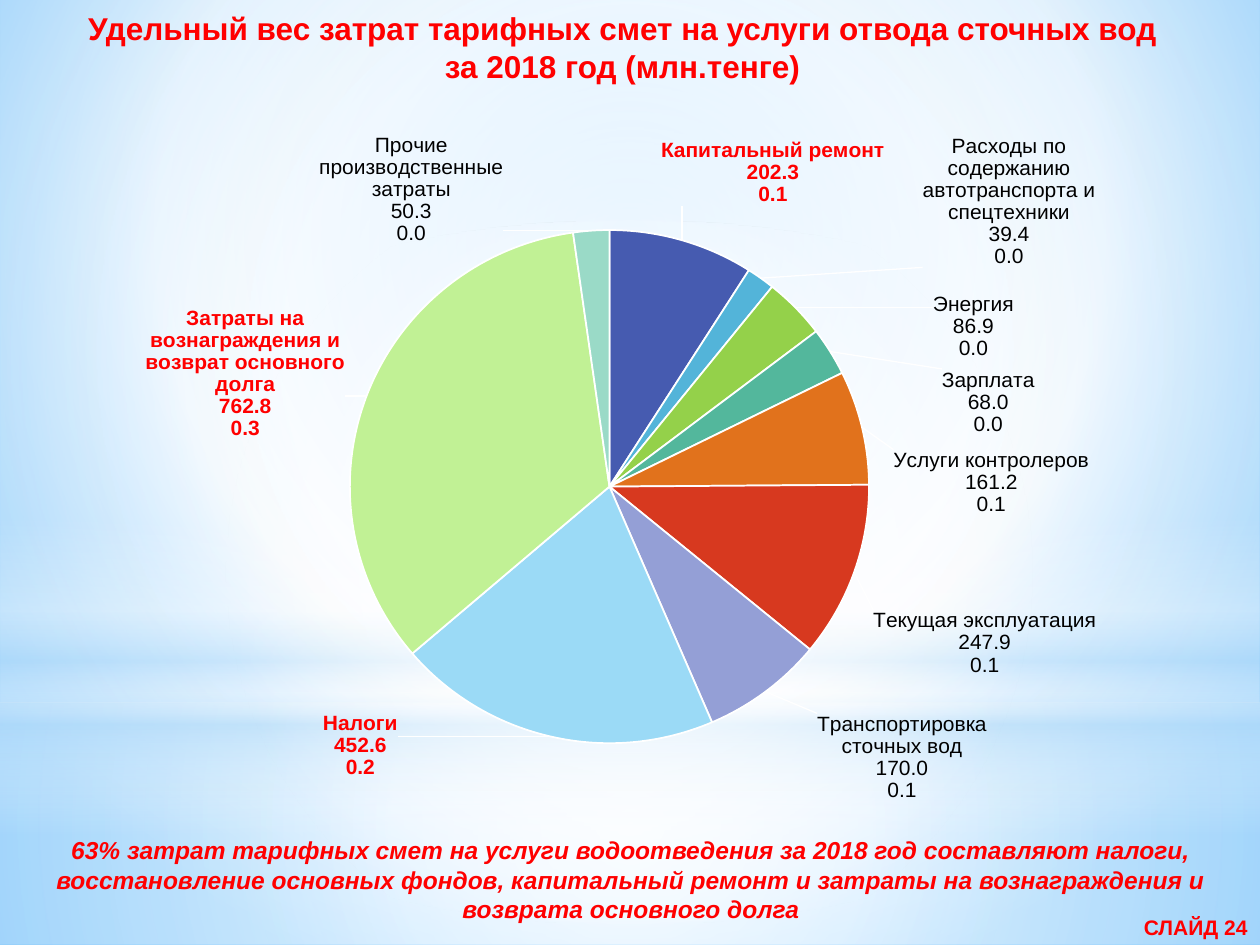
import math
from dataclasses import dataclass

import lxml.etree
import pptx
import pptx.chart.data
import pptx.dml.color
import pptx.enum.chart
import pptx.enum.shapes
import pptx.enum.text
import pptx.oxml
import pptx.oxml.ns
import pptx.util

PX = 914400 // 126
RED, BLACK, WHITE = "FF0000", "000000", "FFFFFF"
qn = pptx.oxml.ns.qn
Align = pptx.enum.text.PP_ALIGN
Shape = pptx.enum.shapes.MSO_SHAPE

CHART_LEFT, CHART_TOP, CHART_WIDTH, CHART_HEIGHT = 35, 113, 1212, 697
PIE_X, PIE_Y, PIE_RADIUS = 609, 487, 258
LABEL_GAP, LINE_HEIGHT = 7, 22


@dataclass
class Stop:
    position: int
    color: str
    alpha: int = 100


@dataclass
class Panel:
    kind: int
    top: int
    height: int
    stops: list[Stop]
    linear: bool = False


@dataclass
class Slice:
    name: str
    value: float
    color: str
    center_x: int  # centre and size of the label
    center_y: int
    width: int
    lines: int
    highlighted: bool = False


@dataclass
class Caption:
    left: int
    top: int
    width: int
    height: int
    lines: list[str]
    size: int
    align: int
    italic: bool = False


PANELS = [
    Panel(Shape.RECTANGLE, 703, 242, [Stop(0, WHITE, 91), Stop(37, WHITE, 76), Stop(100, "B4DCFA", 79)]),
    Panel(Shape.RECTANGLE, 0, 703, [Stop(0, WHITE, 89), Stop(48, WHITE, 62), Stop(100, "B4DCFA", 79)]),
    Panel(Shape.RECTANGLE, 519, 315,
          [Stop(0, WHITE, 0), Stop(29, WHITE, 30), Stop(45, "B4DCFA", 40),
           Stop(55, WHITE, 26), Stop(65, "B4DCFA", 60), Stop(100, WHITE, 0)], linear=True),
    Panel(Shape.OVAL, 221, 703, [Stop(0, WHITE), Stop(56, WHITE, 0)]),
]

SLICES = [
    Slice("Капитальный ремонт", 202.3, "465BB0", 772, 172, 224, 3, True),
    Slice("Расходы по содержанию автотранспорта и спецтехники", 39.4, "53B4D9", 1007, 201, 172, 6),
    Slice("Энергия", 86.9, "94D14A", 971, 327, 80, 3),
    Slice("Зарплата", 68.0, "53B79C", 986, 403, 92, 3),
    Slice("Услуги контролеров", 161.2, "E1721C", 989, 484, 195, 3),
    Slice("Текущая эксплуатация", 247.9, "D7391F", 982, 644, 222, 3),
    Slice("Транспортировка сточных вод", 170.0, "949FD6", 900, 759, 170, 4),
    Slice("Налоги", 452.6, "9BDAF6", 360, 746, 76, 3, True),
    Slice("Затраты на вознаграждения и возврат основного долга", 762.8, "C1F195", 247, 374, 200, 6, True),
    Slice("Прочие производственные затраты", 50.3, "9ADAC7", 411, 189, 184, 5),
]

CAPTIONS = [
    Caption(0, 3, 1245, 89, ["Удельный вес затрат тарифных смет на услуги отвода сточных вод",
                             "за 2018 год (млн.тенге)"], 18, Align.CENTER),
    Caption(16, 829, 1230, 102, ["63% затрат тарифных смет на услуги водоотведения за 2018 год составляют "
                                 "налоги, восстановление основных фондов, капитальный ремонт и затраты на "
                                 "вознаграждения и возврата основного долга"], 14, Align.CENTER, True),
    Caption(1126, 908, 134, 38, ["СЛАЙД 24"], 12, Align.RIGHT),
]


def rgb(color: str):
    return pptx.dml.color.RGBColor.from_string(color)


def px(*lengths: int) -> list[int]:
    return [length * PX for length in lengths]


def set_gradient(fill, root, stops: list[Stop], focus=(50, 50, 50, 50), linear=False) -> None:
    fill.gradient()
    old = next(root.iter(qn("a:gradFill")))
    stop_xml = "".join(
        f'<a:gs pos="{stop.position * 1000}"><a:srgbClr val="{stop.color}">'
        f'<a:alpha val="{stop.alpha * 1000}"/></a:srgbClr></a:gs>' for stop in stops)
    left, top, right, bottom = (side * 1000 for side in focus)
    direction = '<a:lin ang="5400000" scaled="0"/>' if linear else (
        f'<a:path path="circle"><a:fillToRect l="{left}" t="{top}" r="{right}" b="{bottom}"/></a:path>')
    old.getparent().replace(old, pptx.oxml.parse_xml(
        f'<a:gradFill {pptx.oxml.ns.nsdecls("a")} rotWithShape="1">'
        f'<a:gsLst>{stop_xml}</a:gsLst>{direction}</a:gradFill>'))


def add_panel(slide, panel: Panel) -> None:
    shape = slide.shapes.add_shape(panel.kind, *px(0, panel.top, 1260, panel.height))
    shape.shadow.inherit = False
    shape.line.fill.background()
    set_gradient(shape.fill, shape._element, panel.stops, linear=panel.linear)


def add_caption(slide, caption: Caption) -> None:
    shape = slide.shapes.add_textbox(*px(caption.left, caption.top, caption.width, caption.height))
    frame = shape.text_frame
    frame.word_wrap = True
    frame.auto_size = pptx.enum.text.MSO_AUTO_SIZE.SHAPE_TO_FIT_TEXT
    for index, line in enumerate(caption.lines):
        paragraph = frame.add_paragraph() if index else frame.paragraphs[0]
        paragraph.alignment = caption.align
        run = paragraph.add_run()
        run.text = line
        set_font(run.font, caption.size, RED, True)
        run.font.italic = caption.italic


def set_font(font, size: int, color: str, bold: bool, name: str = "Arial") -> None:
    font.size = pptx.util.Pt(size)
    font.name = name
    font.bold = bold
    font.color.rgb = rgb(color)


def add_layout(before, values: dict[str, float], inner: bool = False) -> None:
    """Insert a manual layout right after the given element."""
    target = '<c:layoutTarget val="inner"/><c:xMode val="edge"/><c:yMode val="edge"/>' if inner else ""
    body = "".join(f'<c:{key} val="{value:.3f}"/>' for key, value in values.items())
    before.addnext(pptx.oxml.parse_xml(
        f'<c:layout {pptx.oxml.ns.nsdecls("c")}><c:manualLayout>{target}{body}</c:manualLayout></c:layout>'))


def label_shift(item: Slice, angle: float) -> dict[str, float]:
    """Shift from the usual place outside the pie, as a share of the chart."""
    def side(direction: float) -> float:
        return 0 if abs(direction) < math.sin(math.radians(5)) else math.copysign(0.5, direction)

    across, down = math.sin(angle), -math.cos(angle)
    reach = PIE_RADIUS + LABEL_GAP
    usual_x = PIE_X + reach * across + side(across) * item.width
    usual_y = PIE_Y + reach * down + side(down) * item.lines * LINE_HEIGHT
    return {"x": (item.center_x - usual_x) / CHART_WIDTH, "y": (item.center_y - usual_y) / CHART_HEIGHT}


def add_pie(slide) -> None:
    data = pptx.chart.data.CategoryChartData(number_format="0.0")
    data.categories = [item.name for item in SLICES]
    data.add_series("Series 1", [item.value for item in SLICES])
    chart = slide.shapes.add_chart(pptx.enum.chart.XL_CHART_TYPE.PIE,
                                   *px(CHART_LEFT, CHART_TOP, CHART_WIDTH, CHART_HEIGHT), data).chart
    chart.has_title = chart.has_legend = False
    set_font(chart.font, 18, BLACK, False, "Cabin")
    plot = chart.plots[0]
    plot.vary_by_categories = True
    plot_area = next(chart._chartSpace.iter(qn("c:plotArea")))
    for layout in plot_area.findall(qn("c:layout")):
        plot_area.remove(layout)
    add_layout(plot_area[0], {"x": 0.26, "y": 0.167, "w": 0.428, "h": 0.738}, inner=True)
    layout = plot_area.find(qn("c:layout"))
    layout.find(".//" + qn("c:x")).set("val", "0.227")
    layout.find(".//" + qn("c:w")).set("val", "0.494")
    layout.find(".//" + qn("c:h")).set("val", "0.745")
    plot_area.insert(0, layout)

    # Slices and their label fonts
    series = plot.series[0]
    for index, item in enumerate(SLICES):
        point = series.points[index]
        point.format.fill.solid()
        point.format.fill.fore_color.rgb = rgb(item.color)
        point.format.line.color.rgb = rgb(WHITE)
        point.format.line.width = pptx.util.Pt(1)
        set_font(point.data_label.font, 12, RED if item.highlighted else BLACK, item.highlighted)
        point.data_label.position = pptx.enum.chart.XL_LABEL_POSITION.OUTSIDE_END

    # Label contents and places
    labels = series.data_labels
    labels.number_format, labels.number_format_is_linked = "0.0", False
    labels.show_value = labels.show_percentage = labels.show_category_name = True
    set_font(labels.font, 12, BLACK, False)
    total, before = sum(item.value for item in SLICES), 0
    for item, label in zip(SLICES, labels._element.findall(qn("c:dLbl"))):
        angle = 2 * math.pi * (before + item.value / 2) / total
        before += item.value
        add_layout(label.find(qn("c:idx")), label_shift(item, angle))
        for name in ("c:showVal", "c:showCatName", "c:showPercent"):
            label.find(qn(name)).set("val", "1")
    for flag in list(labels._element.iter(qn("c:showBubbleSize"))):
        separator = lxml.etree.Element(qn("c:separator"))
        separator.text = "\n"
        flag.addnext(separator)
    for flag in labels._element.findall(qn("c:showLeaderLines")):
        flag.set("val", "1")
        flag.addnext(pptx.oxml.parse_xml(
            f'<c:leaderLines {pptx.oxml.ns.nsdecls("c", "a")}><c:spPr><a:ln w="9525"><a:solidFill>'
            f'<a:srgbClr val="{WHITE}"/></a:solidFill></a:ln></c:spPr></c:leaderLines>'))


def main() -> None:
    presentation = pptx.Presentation()
    presentation.slide_width, presentation.slide_height = px(1260, 945)
    slide = presentation.slides.add_slide(presentation.slide_layouts[6])
    # Background
    set_gradient(slide.background.fill, slide._element,
                 [Stop(0, "9ED5FF"), Stop(60, WHITE), Stop(100, "5BB9FF")], (20, 10, 20, 60))
    for panel in PANELS:
        add_panel(slide, panel)
    # Title, chart and notes below it
    add_caption(slide, CAPTIONS[0])
    add_pie(slide)
    for caption in CAPTIONS[1:]:
        add_caption(slide, caption)
    presentation.save("out.pptx")


if __name__ == "__main__":
    main()
